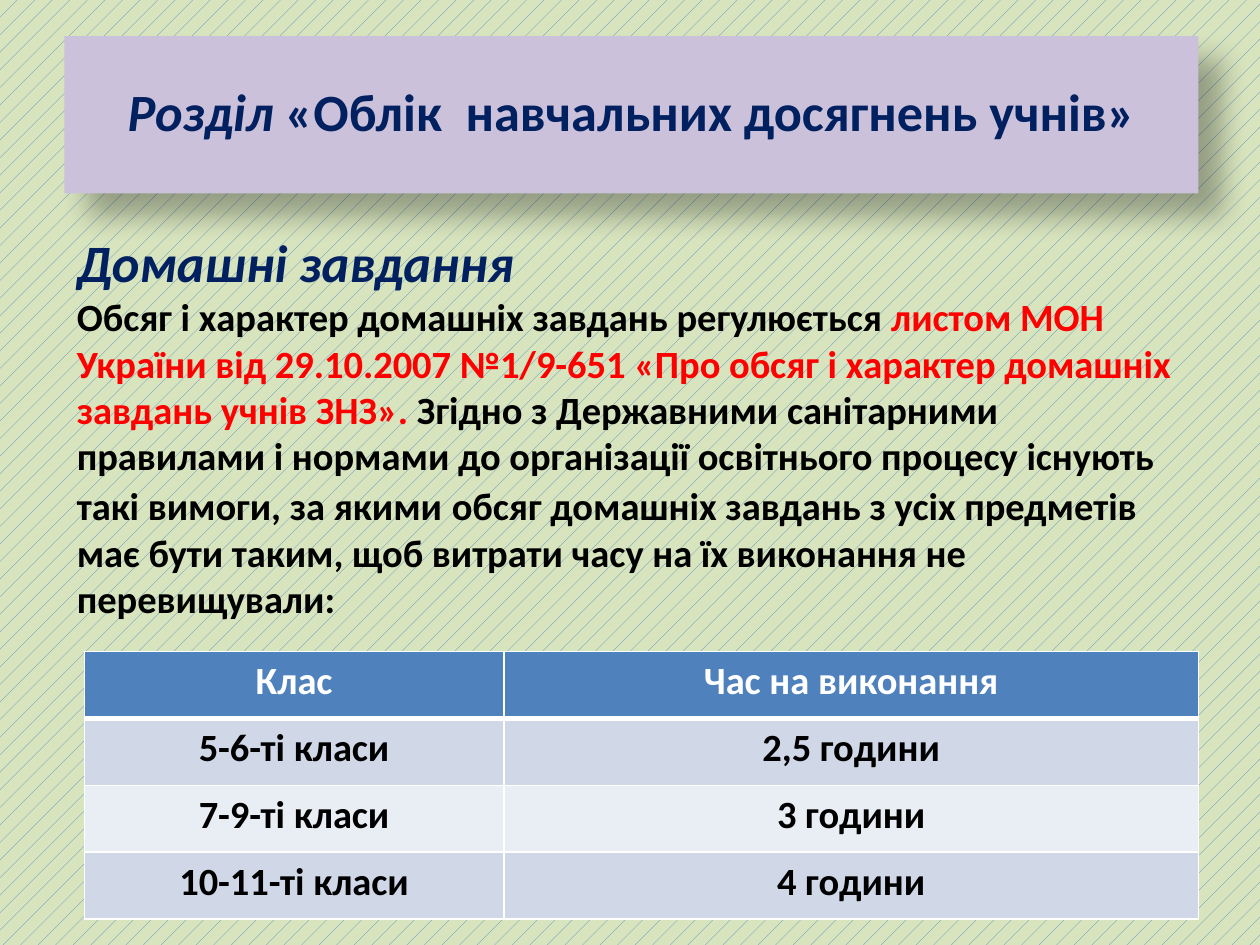
import lxml.etree
import pptx
import pptx.dml.color
import pptx.enum.dml
import pptx.enum.shapes
import pptx.enum.text
import pptx.oxml
import pptx.oxml.ns
import pptx.util

Cm = pptx.util.Cm
Pt = pptx.util.Pt
RGBColor = pptx.dml.color.RGBColor
CENTER = pptx.enum.text.PP_ALIGN.CENTER

BLACK = RGBColor(0x00, 0x00, 0x00)
WHITE = RGBColor(0xFF, 0xFF, 0xFF)
RED = RGBColor(0xFF, 0x00, 0x00)
NAVY = RGBColor(0x00, 0x20, 0x60)
BLUE = RGBColor(0x4F, 0x81, 0xBD)
LILAC = RGBColor(0xCC, 0xC1, 0xDA)
LIGHT_GREEN = RGBColor(0xD7, 0xE4, 0xBD)
BANDS = (RGBColor(0xD0, 0xD8, 0xE8), RGBColor(0xE9, 0xED, 0xF4))

TITLE_FORMAT = {"size": Pt(29.9), "bold": True, "color": NAVY}
HEADING_FORMAT = {"size": Pt(30), "bold": True, "italic": True, "color": NAVY}
BODY_FORMAT = {"size": Pt(22), "bold": True, "color": BLACK}

TITLE_RUNS = [
    ("Розділ ", {**TITLE_FORMAT, "italic": True}),
    ("«Облік  навчальних досягнень учнів»", TITLE_FORMAT),
]
BODY_PARAGRAPHS = [
    [("Домашні завдання", HEADING_FORMAT)],
    [
        ("Обсяг і характер домашніх завдань регулюється ", BODY_FORMAT),
        ("листом МОН України від 29.10.2007 №1/9-651 «Про обсяг і характер "
         "домашніх завдань учнів ЗНЗ». ", {**BODY_FORMAT, "color": RED}),
        ("Згідно з Державними санітарними правилами і нормами до організації "
         "освітнього процесу існують такі вимоги, за якими", BODY_FORMAT),
        (" ", {"size": Pt(24), "bold": False, "color": BLACK}),
        ("обсяг домашніх завдань з усіх предметів має бути таким, щоб витрати "
         "часу на їх виконання не перевищували:", BODY_FORMAT),
    ],
]
TABLE_ROWS = [
    ("Клас", "Час на виконання"),
    ("5-6-ті класи", "2,5 години"),
    ("7-9-ті класи", "3 години"),
    ("10-11-ті класи", "4 години"),
]


def set_attributes(target, values):
    """Set each named attribute of the target."""
    for name, value in values.items():
        setattr(target, name, value)


def add_runs(paragraph, runs):
    """Fill the paragraph with (text, format) runs."""
    for text, values in runs:
        run = paragraph.add_run()
        run.text = text
        font_values = {"name": "Calibri", **values}
        run.font.color.rgb = font_values.pop("color")
        set_attributes(run.font, font_values)


def add_shadow(shape, blur, distance, angle, opacity):
    """Give the shape a soft black outer shadow."""
    shape.shadow.inherit = False
    effects = shape._element.spPr.find(pptx.oxml.ns.qn("a:effectLst"))
    effects.append(pptx.oxml.parse_xml(
        f'<a:outerShdw {pptx.oxml.ns.nsdecls("a")} blurRad="{Pt(blur)}" '
        f'dist="{Pt(distance)}" dir="{angle * 60000}" algn="tl" rotWithShape="0">'
        f'<a:srgbClr val="{BLACK}"><a:alpha val="{opacity * 1000}"/></a:srgbClr>'
        '</a:outerShdw>'))


def add_borders(cell, widths):
    """Draw white cell borders with the given width for each side."""
    properties = cell._tc.get_or_add_tcPr()
    for side, width in widths.items():
        line = lxml.etree.SubElement(
            properties, pptx.oxml.ns.qn(f"a:ln{side}"), w=str(Pt(width)))
        fill = lxml.etree.SubElement(line, pptx.oxml.ns.qn("a:solidFill"))
        lxml.etree.SubElement(fill, pptx.oxml.ns.qn("a:srgbClr"), val=str(WHITE))


def paint_background(slide):
    """Cover the slide with a green pattern."""
    fill = slide.background.fill
    fill.patterned()
    fill.pattern = pptx.enum.dml.MSO_PATTERN.PERCENT_5
    fill.fore_color.rgb = BLUE
    fill.back_color.rgb = LIGHT_GREEN


def add_title(slide, left, top, width, height):
    """Place the lilac title panel in its box."""
    shape = slide.shapes.add_shape(
        pptx.enum.shapes.MSO_SHAPE.RECTANGLE, left, top, width, height)
    shape.fill.solid()
    shape.fill.fore_color.rgb = LILAC
    shape.line.fill.background()
    add_shadow(shape, blur=15, distance=18, angle=45, opacity=30)
    set_attributes(shape.text_frame, {
        "word_wrap": True,
        "vertical_anchor": pptx.enum.text.MSO_ANCHOR.MIDDLE,
        "margin_bottom": Cm(0.3),
    })
    paragraph = shape.text_frame.paragraphs[0]
    paragraph.alignment = CENTER
    add_runs(paragraph, TITLE_RUNS)


def add_body(slide, left, top, width, height):
    """Place the heading and the explanation in their box."""
    frame = slide.shapes.add_textbox(left, top, width, height).text_frame
    set_attributes(frame, {
        "word_wrap": True,
        "auto_size": pptx.enum.text.MSO_AUTO_SIZE.SHAPE_TO_FIT_TEXT,
    })
    for index, runs in enumerate(BODY_PARAGRAPHS):
        paragraph = frame.add_paragraph() if index else frame.paragraphs[0]
        add_runs(paragraph, runs)


def add_homework_table(slide, left, top, width, height):
    """Place the table of homework time by class in its box."""
    table = slide.shapes.add_table(
        len(TABLE_ROWS), len(TABLE_ROWS[0]), left, top, width, height).table
    class_width = Cm(8.46)
    table.columns[0].width = class_width
    table.columns[1].width = width - class_width
    for row, texts in enumerate(TABLE_ROWS):
        is_header = row == 0
        for column, text in enumerate(texts):
            cell = table.cell(row, column)
            add_borders(cell, {
                "L": 1, "R": 1, "T": 3 if row == 1 else 1, "B": 3 if is_header else 1})
            cell.fill.solid()
            cell.fill.fore_color.rgb = BLUE if is_header else BANDS[(row - 1) % 2]
            paragraph = cell.text_frame.paragraphs[0]
            paragraph.alignment = CENTER
            color = WHITE if is_header else BLACK
            add_runs(paragraph, [(text, {**BODY_FORMAT, "color": color})])


def main():
    """Build and save the presentation."""
    presentation = pptx.Presentation()
    set_attributes(presentation, {"slide_width": Cm(25.4), "slide_height": Cm(19.05)})
    slide = presentation.slides.add_slide(presentation.slide_layouts[6])
    paint_background(slide)
    add_homework_table(slide, Cm(1.7), Cm(13.13), Cm(22.46), Cm(5.4))
    add_title(slide, Cm(1.3), Cm(0.73), Cm(22.86), Cm(3.17))
    add_body(slide, Cm(1.3), Cm(4.52), Cm(22.86), Cm(8.2))
    presentation.save("out.pptx")


if __name__ == "__main__":
    main()
